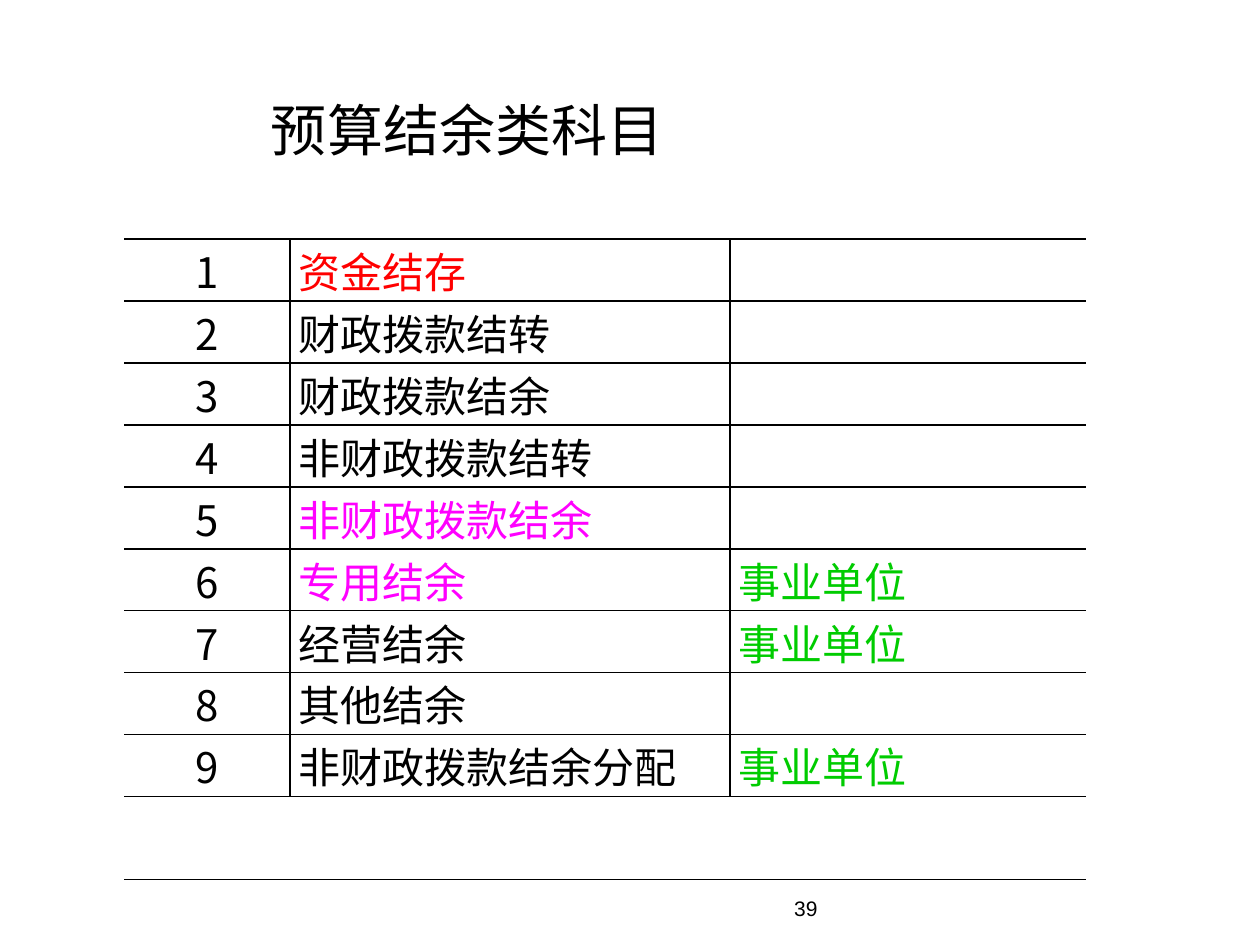
"""Build the slide listing the budget balance accounts in a ruled table."""
from lxml import etree
from pptx import Presentation
from pptx import util as u
from pptx.dml.color import RGBColor
from pptx.enum import text
from pptx.oxml import ns

PX = 914400 // 126
COLORS = {"black": "000000", "red": "FF0000", "magenta": "FF00FF", "green": "00CC00"}
CJK = "Noto Sans CJK SC"
TITLE = "预算结余类科目"
ACCOUNTS = [
    ("资金结存", "red", ""),
    ("财政拨款结转", "black", ""),
    ("财政拨款结余", "black", ""),
    ("非财政拨款结转", "black", ""),
    ("非财政拨款结余", "magenta", ""),
    ("专用结余", "magenta", "事业单位"),
    ("经营结余", "black", "事业单位"),
    ("其他结余", "black", ""),
    ("非财政拨款结余分配", "black", "事业单位"),
]
COLUMNS = [166, 440, 356]
ROWS = [153] + [62] * len(ACCOUNTS) + [83]


class SlideBuilder:
    """Hold the style and the current slide."""

    def __init__(self, slide):
        self.slide = slide

    def style(self, frame, size, color="black", font=CJK, align=text.PP_ALIGN.LEFT):
        """Format every run in a text frame."""
        for paragraph in frame.paragraphs:
            paragraph.alignment = align
            for run in paragraph.runs:
                run.font.size = u.Pt(size)
                run.font.name = font
                run.font.bold = False
                run.font.color.rgb = RGBColor.from_string(COLORS[color])
                east_asian = etree.SubElement(run.font._element, ns.qn("a:ea"))
                east_asian.set("typeface", font)

    def label(self, words, left, top, width, height, size, font, align):
        """Add a bottom-anchored text box."""
        box = self.slide.shapes.add_textbox(left * PX, top * PX, width * PX, height * PX)
        frame = box.text_frame
        frame.word_wrap = True
        frame.vertical_anchor = text.MSO_ANCHOR.BOTTOM
        frame.text = words
        self.style(frame, size, font=font, align=align)

    def table(self, left, top, columns, rows):
        """Add an unbanded table with the given column widths and row heights."""
        grid = self.slide.shapes.add_table(
            len(rows), len(columns), left * PX, top * PX, sum(columns) * PX, sum(rows) * PX
        ).table
        grid.first_row = grid.horz_banding = False
        for column, width in zip(grid.columns, columns):
            column.width = width * PX
        for row, height in zip(grid.rows, rows):
            row.height = height * PX
        return grid

    def borders(self, cell, ruled):
        """Rule the named sides of a cell and clear the others."""
        properties = cell._tc.get_or_add_tcPr()
        for side in "LRTB":
            line = etree.SubElement(properties, ns.qn(f"a:ln{side}"), w=str(u.Pt(1)))
            if side in ruled:
                fill = etree.SubElement(line, ns.qn("a:solidFill"))
                etree.SubElement(fill, ns.qn("a:srgbClr"), val=COLORS["black"])
            else:
                etree.SubElement(line, ns.qn("a:noFill"))
        cell.fill.background()

    def cell(self, cell, words, size=24, color="black", align=text.PP_ALIGN.LEFT,
             inset=9, anchor=text.MSO_ANCHOR.MIDDLE):
        """Write formatted text into a table cell."""
        cell.margin_left = inset * PX
        cell.margin_right = 9 * PX
        cell.margin_top = cell.margin_bottom = 0
        cell.vertical_anchor = anchor
        if words:
            cell.text_frame.text = words
            self.style(cell.text_frame, size, color, align=align)


def main():
    deck = Presentation()
    deck.slide_width, deck.slide_height = u.Inches(10), u.Inches(7.5)
    builder = SlideBuilder(deck.slides.add_slide(deck.slide_layouts[6]))

    accounts = builder.table(124, 86, COLUMNS, ROWS)
    last_row, last_column = len(ROWS) - 1, len(COLUMNS) - 1
    for row in range(len(ROWS)):
        for column in range(len(COLUMNS)):
            ruled = "B" if row == 0 else "TB"
            if 0 < row < last_row:
                ruled += "L" * (column > 0) + "R" * (column < last_column)
            builder.borders(accounts.cell(row, column), ruled)
    accounts.cell(0, 0).merge(accounts.cell(0, 1))
    accounts.cell(last_row, 0).merge(accounts.cell(last_row, last_column))

    builder.cell(accounts.cell(0, 0), TITLE, size=32, inset=147, anchor=text.MSO_ANCHOR.TOP)
    for number, (account, color, scope) in enumerate(ACCOUNTS, 1):
        builder.cell(accounts.cell(number, 0), str(number), align=text.PP_ALIGN.CENTER)
        builder.cell(accounts.cell(number, 1), account, color=color)
        builder.cell(accounts.cell(number, 2), scope, color="green")

    builder.label("39", 431, 861, 399, 66, 12, "Arial", text.PP_ALIGN.RIGHT)
    deck.save("out.pptx")


if __name__ == "__main__":
    main()
